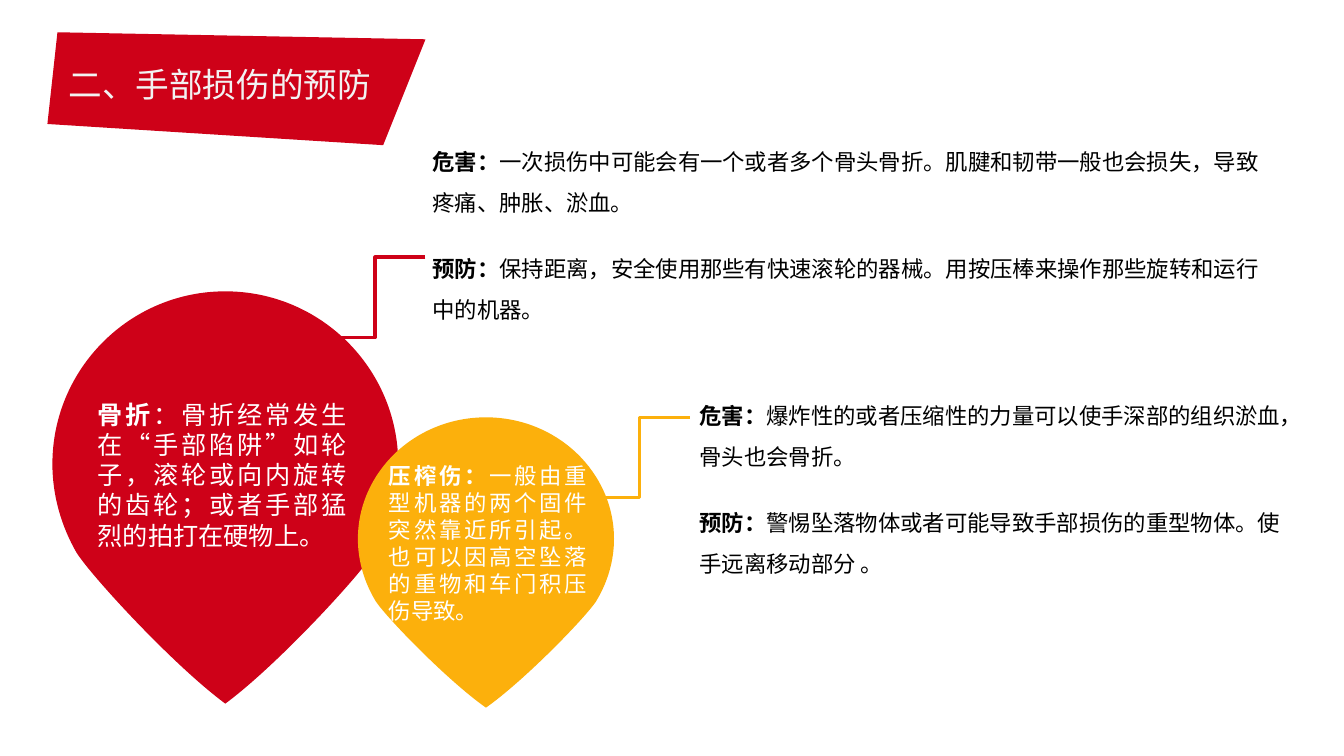
"""Build the slide on preventing hand injuries: two pins with linked advice."""
from lxml import etree
from pptx import Presentation
from pptx.dml.color import RGBColor
from pptx.enum import shapes, text
from pptx.oxml.ns import qn
from pptx.util import Inches, Pt

COLORS = {"red": "CE0118", "amber": "FCB00C", "title": "F2F2F2", "white": "FFFFFF", "black": "000000"}
FONT = "Arial"
TITLE = "二、手部损伤的预防"
TITLE_BOX = (0.58, 0.58, 3.64, 0.51)
BANNER = [(0.57, 0.32), (4.22, 0.39), (3.8, 1.44), (0.47, 1.23)]

INJURIES = [
    {
        "color": "red", "pin": (0.52, 2.89, 3.43, 4.09),
        "label_box": (0.87, 3.91, 2.67, 1.61), "label_size": 18,
        "label": ("骨折", "：骨折经常发生在“手部陷阱”如轮子，滚轮或向内旋转的齿轮；或者手部猛烈的拍打在硬物上。"),
        "link": (4.22, 2.55), "advice_box": (4.19, 1.29, 8.42, 1.94),
        "advice": [
            ("危害：", "一次损伤中可能会有一个或者多个骨头骨折。肌腱和韧带一般也会损失，导致疼痛、肿胀、淤血。"),
            ("预防：", "保持距离，安全使用那些有快速滚轮的器械。用按压棒来操作那些旋转和运行中的机器。"),
        ],
    },
    {
        "color": "amber", "pin": (3.55, 4.14, 2.54, 2.88),
        "label_box": (3.76, 4.54, 2.16, 1.72), "label_size": 16,
        "label": ("压榨伤：", "一般由重型机器的两个固件突然靠近所引起。也可以因高空坠落的重物和车门积压伤导致。"),
        "link": (6.84, 4.14), "advice_box": (6.84, 3.81, 6.03, 1.94),
        "advice": [
            ("危害：", "爆炸性的或者压缩性的力量可以使手深部的组织淤血，骨头也会骨折。"),
            ("预防：", "警惕坠落物体或者可能导致手部损伤的重型物体。使手远离移动部分 。"),
        ],
    },
]
LINK_WIDTH, LINK_HEIGHT = 1, 0.8

PIN_START = (50, 0)
PIN_RIGHT = [
    [(77.6, 0), (100, 18.8), (100, 41.9)],
    [(100, 49.6), (97.4, 57), (93, 63.4)],
    [(88.6, 69.2), (65, 90.7), (50, 100)],
]


def rgb(name):
    return RGBColor.from_string(COLORS[name])


def pin_curves():
    points = [PIN_START] + [point for curve in PIN_RIGHT for point in curve]
    mirrored = [(100 - x, y) for x, y in reversed(points[:-1])]
    return PIN_RIGHT + [mirrored[i:i + 3] for i in range(0, len(mirrored), 3)]


def add_outline(slide, points, color):
    corners = [(Inches(x), Inches(y)) for x, y in points]
    builder = slide.shapes.build_freeform(*corners[0])
    builder.add_line_segments(corners[1:], close=True)
    shape = builder.convert_to_shape()
    shape.shadow.inherit = False
    shape.fill.solid()
    shape.fill.fore_color.rgb = rgb(color)
    shape.line.fill.background()
    return shape


def add_pin(slide, box, color):
    left, top, width, height = box
    curves = pin_curves()
    anchors = [PIN_START] + [curve[-1] for curve in curves]
    pin = add_outline(slide, [(left + width * x / 100, top + height * y / 100) for x, y in anchors], color)
    for segment, curve in zip(list(pin.element.iter(qn("a:lnTo"))), curves):
        bezier = etree.Element(qn("a:cubicBezTo"))
        for x, y in curve:
            etree.SubElement(bezier, qn("a:pt"), x=str(round(pin.width * x / 100)),
                             y=str(round(pin.height * y / 100)))
        segment.getparent().replace(segment, bezier)


def add_text(slide, box, paragraphs, size, color, align, line_spacing=None):
    frame = slide.shapes.add_textbox(*map(Inches, box)).text_frame
    frame.word_wrap = True
    frame.auto_size = text.MSO_AUTO_SIZE.SHAPE_TO_FIT_TEXT
    for index, (heading, body) in enumerate(paragraphs):
        paragraph = frame.add_paragraph() if index else frame.paragraphs[0]
        paragraph.alignment = align
        paragraph.line_spacing = line_spacing
        if index:
            paragraph.space_before = Pt(19)
        for words, bold in ((heading, True), (body, False)):
            run = paragraph.add_run()
            run.text = words
            run.font.name = FONT
            run.font.size = Pt(size)
            run.font.bold = bold
            run.font.color.rgb = rgb(color)


def add_link(slide, start, color):
    x, y = start
    link = slide.shapes.add_connector(
        shapes.MSO_CONNECTOR.ELBOW, Inches(x), Inches(y),
        Inches(x - LINK_WIDTH), Inches(y + LINK_HEIGHT))
    link.line.color.rgb = rgb(color)
    link.line.width = Pt(2.25)
    etree.SubElement(link.element.spPr, qn("a:effectLst"))


def add_title(slide):
    title = slide.shapes.title
    title.left, title.top, title.width, title.height = map(Inches, TITLE_BOX)
    frame = title.text_frame
    frame.text = TITLE
    frame.word_wrap = True
    frame.auto_size = text.MSO_AUTO_SIZE.SHAPE_TO_FIT_TEXT
    frame.vertical_anchor = text.MSO_ANCHOR.TOP
    paragraph = frame.paragraphs[0]
    paragraph.alignment = text.PP_ALIGN.LEFT
    paragraph.font.name = FONT
    paragraph.font.size = Pt(24)
    paragraph.font.color.rgb = rgb("title")
    banner = add_outline(slide, BANNER, "red")
    title.element.addprevious(banner.element)


def main():
    presentation = Presentation()
    presentation.slide_width, presentation.slide_height = Inches(13.33), Inches(7.5)
    slide = presentation.slides.add_slide(presentation.slide_layouts[5])
    add_title(slide)
    for injury in INJURIES:
        add_pin(slide, injury["pin"], injury["color"])
    for injury in INJURIES:
        add_text(slide, injury["label_box"], [injury["label"]], injury["label_size"],
                 "white", text.PP_ALIGN.JUSTIFY)
        add_text(slide, injury["advice_box"], injury["advice"], 16,
                 "black", text.PP_ALIGN.LEFT, 1.5)
        add_link(slide, injury["link"], injury["color"])
    presentation.save("out.pptx")


if __name__ == "__main__":
    main()
